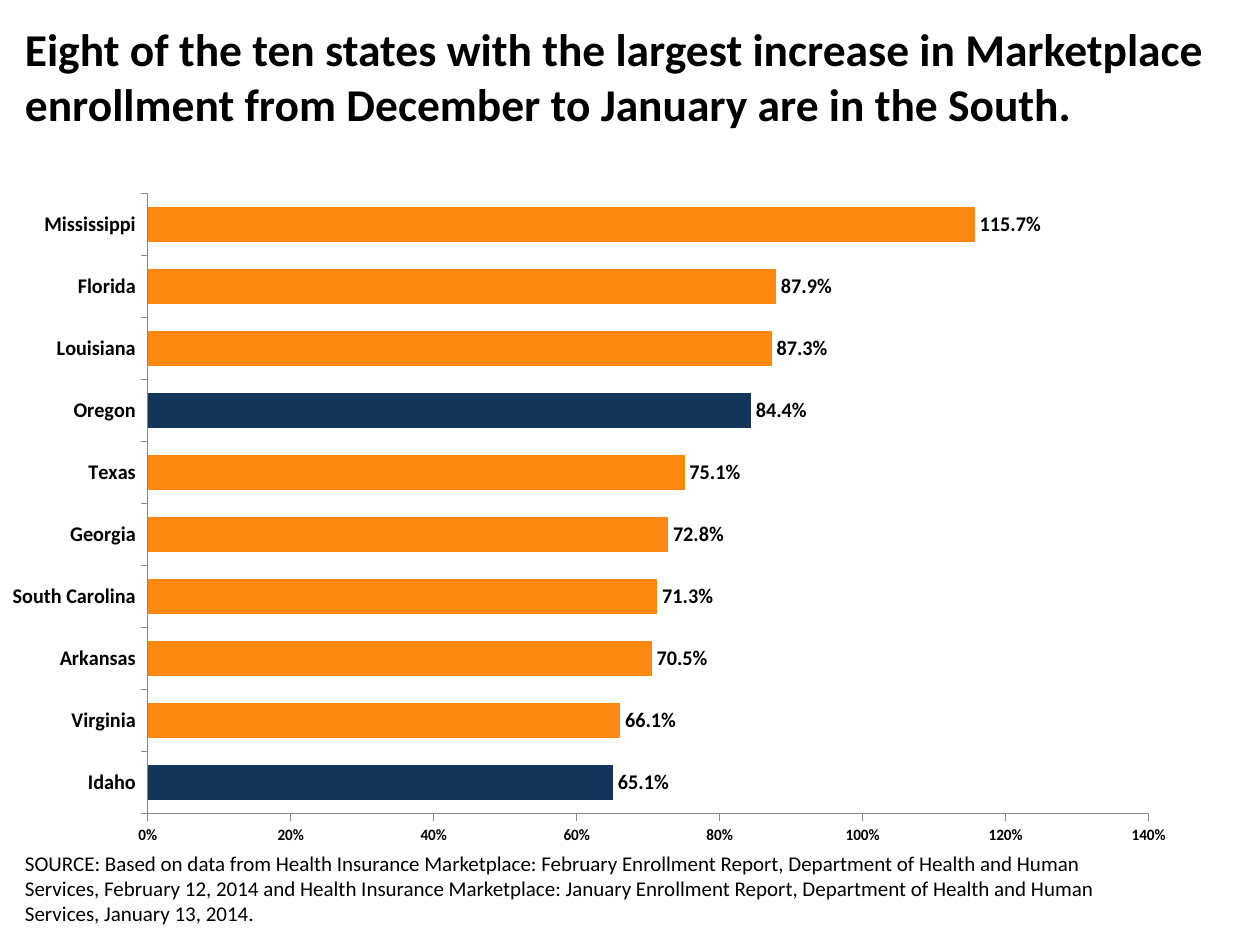
from lxml.etree import SubElement
from pptx import Presentation
from pptx.chart.data import CategoryChartData
from pptx.dml.color import RGBColor
from pptx.enum.chart import XL_CHART_TYPE, XL_LABEL_POSITION, XL_TICK_MARK
from pptx.enum.text import MSO_ANCHOR
from pptx.oxml.ns import qn
from pptx.util import Inches, Pt

FONT = "Calibri"
BLACK, GRAY, NAVY, ORANGE = "000000", "878787", "133559", "FF8811"
OUTSIDE_SOUTH = {"Oregon", "Idaho"}
INCREASES = {
    "Idaho": 0.651,
    "Virginia": 0.661,
    "Arkansas": 0.705,
    "South Carolina": 0.713,
    "Georgia": 0.728,
    "Texas": 0.751,
    "Oregon": 0.844,
    "Louisiana": 0.873,
    "Florida": 0.879,
    "Mississippi": 1.157,
}
PLOT_LAYOUT = {"layoutTarget": "inner", "xMode": "edge", "yMode": "edge",
               "x": 0.075, "y": 0.007, "w": 0.842, "h": 0.952}
TITLE = ("Eight of the ten states with the largest increase in Marketplace "
         "enrollment from December to January are in the South.")
SOURCE = ("SOURCE: Based on data from Health Insurance Marketplace: February "
          "Enrollment Report, Department of Health and Human Services, "
          "February 12, 2014 and Health Insurance Marketplace: January "
          "Enrollment Report, Department of Health and Human Services, "
          "January 13, 2014.")


def color(value):
    return RGBColor.from_string(value)


def set_attrs(obj, **values):
    for name, value in values.items():
        setattr(obj, name, value)


def set_font(font, size, bold=False):
    set_attrs(font, name=FONT, size=Pt(size), bold=bold)
    font.color.rgb = color(BLACK)


def add_text(s, text, box, size, anchor, bold=False):
    tf = s.shapes.add_textbox(*map(Inches, box)).text_frame
    set_attrs(tf, word_wrap=True, vertical_anchor=anchor)
    r = tf.paragraphs[0].add_run()
    r.text = text
    set_font(r.font, size, bold)


def style_axis(axis, size):
    set_attrs(axis, has_major_gridlines=False,
              major_tick_mark=XL_TICK_MARK.OUTSIDE,
              minor_tick_mark=XL_TICK_MARK.NONE)
    axis.format.line.color.rgb = color(GRAY)
    set_font(axis.tick_labels.font, size, True)


def place_plot(chart):
    area = chart.plots[0]._element.getparent()
    layout = area.find(qn("c:layout"))
    if layout is None:
        layout = SubElement(area, qn("c:layout"))
        area.insert(0, layout)
    manual = SubElement(layout, qn("c:manualLayout"))
    for name, value in PLOT_LAYOUT.items():
        SubElement(manual, qn(f"c:{name}")).set("val", str(value))


def add_bar_chart(s, box):
    data = CategoryChartData(number_format="0.0%")
    data.categories = list(INCREASES)
    data.add_series("Series 1", list(INCREASES.values()))
    chart = s.shapes.add_chart(XL_CHART_TYPE.BAR_CLUSTERED,
                               *map(Inches, box), data).chart
    set_attrs(chart, has_legend=False, has_title=False)
    set_font(chart.font, 18)
    style_axis(chart.category_axis, 12)
    style_axis(chart.value_axis, 9)
    set_attrs(chart.value_axis, minimum_scale=0, maximum_scale=1.4,
              major_unit=0.2)
    set_attrs(chart.value_axis.tick_labels, number_format="0%",
              number_format_is_linked=False)
    plot = chart.plots[0]
    set_attrs(plot, gap_width=73, vary_by_categories=False,
              has_data_labels=True)
    set_attrs(plot.data_labels, show_value=True, number_format="0.0%",
              number_format_is_linked=False,
              position=XL_LABEL_POSITION.OUTSIDE_END)
    set_font(plot.data_labels.font, 12, True)
    series = plot.series[0]
    series.format.fill.solid()
    series.format.fill.fore_color.rgb = color(NAVY)
    for i, state in enumerate(INCREASES):
        if state not in OUTSIDE_SOUTH:
            fill = series.points[i].format.fill
            fill.solid()
            fill.fore_color.rgb = color(ORANGE)
    place_plot(chart)


def main():
    prs = Presentation()
    set_attrs(prs, slide_width=Inches(10), slide_height=Inches(7.5))
    s = prs.slides.add_slide(prs.slide_layouts[6])
    add_bar_chart(s, (0.1, 1.5, 9.8, 5.2))
    add_text(s, SOURCE, (0.1, 6.8, 9.1, 0.6), 12, MSO_ANCHOR.BOTTOM)
    add_text(s, TITLE, (0.1, 0.1, 9.8, 1), 26, MSO_ANCHOR.MIDDLE, bold=True)
    prs.save("out.pptx")


if __name__ == "__main__":
    main()
